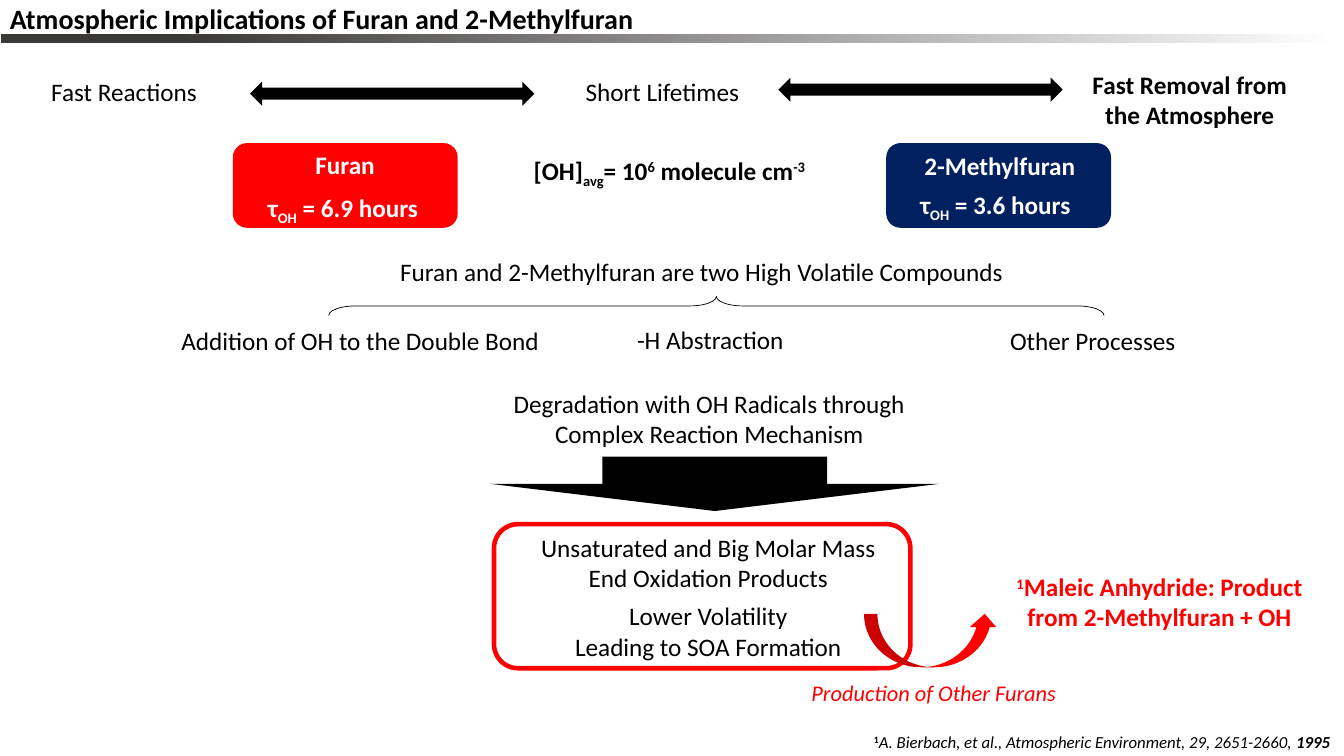
from typing import NamedTuple, Optional

import pptx
import pptx.dml.color
import pptx.enum.shapes
import pptx.enum.text
import pptx.util

PX = 9144  # EMU per px, 100 px to the inch
FONT = "Calibri"
BLACK, WHITE, RED, NAVY = "000000", "FFFFFF", "FF0000", "002060"
SUB, SUP = -25000, 30000
SHAPE = pptx.enum.shapes.MSO_SHAPE
ALIGN = pptx.enum.text.PP_ALIGN


class Box(NamedTuple):
    x: int
    y: int
    w: int
    h: int


class Run(NamedTuple):
    text: str
    baseline: int = 0
    bold: Optional[bool] = None
    italic: Optional[bool] = None


class Label(NamedTuple):
    box: Box
    lines: list[list[Run]]
    size: int = 18
    color: str = BLACK
    bold: bool = False
    italic: bool = False
    center: bool = False
    wrap: bool = False


class Figure(NamedTuple):
    kind: SHAPE
    box: Box
    fill: Optional[str] = None
    line: Optional[str] = None
    line_pt: float = 0
    rotation: int = 0
    adjustments: tuple[float, ...] = ()


def rgb(color: str) -> pptx.dml.color.RGBColor:
    return pptx.dml.color.RGBColor.from_string(color)


def emu(box: Box) -> list[int]:
    return [v * PX for v in box]


def plain(*lines: str) -> list[list[Run]]:
    return [[Run(line)] for line in lines]


def lifetime(hours: str) -> list[list[Run]]:
    return [[Run("τ"), Run("ΟΗ", SUB), Run(f" = {hours} hours")]]


def add_figure(slide, fig: Figure):
    sp = slide.shapes.add_shape(fig.kind, *emu(fig.box))
    sp.shadow.inherit = False
    sp.rotation = fig.rotation
    for i, value in enumerate(fig.adjustments):
        sp.adjustments[i] = value
    if fig.fill:
        sp.fill.solid()
        sp.fill.fore_color.rgb = rgb(fig.fill)
    else:
        sp.fill.background()
    if fig.line:
        sp.line.color.rgb = rgb(fig.line)
        sp.line.width = pptx.util.Pt(fig.line_pt)
    else:
        sp.line.fill.background()
    return sp


def add_label(slide, label: Label) -> None:
    tf = slide.shapes.add_textbox(*emu(label.box)).text_frame
    tf.word_wrap = label.wrap
    tf.auto_size = pptx.enum.text.MSO_AUTO_SIZE.SHAPE_TO_FIT_TEXT
    for i, line in enumerate(label.lines):
        p = tf.add_paragraph() if i else tf.paragraphs[0]
        p.alignment = ALIGN.CENTER if label.center else ALIGN.LEFT
        p.font.name = FONT
        p.font.size = pptx.util.Pt(label.size)
        p.font.color.rgb = rgb(label.color)
        p.font.bold = label.bold
        p.font.italic = label.italic
        for run in line:
            r = p.add_run()
            r.text = run.text
            r.font.bold = run.bold
            r.font.italic = run.italic
            if run.baseline:
                r._r.get_or_add_rPr().set("baseline", str(run.baseline))


FIGURES = [
    # Compound cards
    Figure(SHAPE.ROUNDED_RECTANGLE, Box(231, 142, 223, 84), RED),
    Figure(SHAPE.ROUNDED_RECTANGLE, Box(879, 142, 223, 84), NAVY),
    # Links between the three facts
    Figure(SHAPE.LEFT_RIGHT_ARROW, Box(248, 81, 282, 24), BLACK),
    Figure(SHAPE.LEFT_RIGHT_ARROW, Box(772, 77, 282, 24), BLACK),
    # Brace over the reaction paths
    Figure(SHAPE.LEFT_BRACE, Box(701, -81, 19, 769), line=BLACK, line_pt=0.5,
           rotation=90, adjustments=(1.4, 0.5)),
    # Products
    Figure(SHAPE.DOWN_ARROW, Box(486, 453, 446, 54), BLACK),
    Figure(SHAPE.ROUNDED_RECTANGLE, Box(490, 520, 413, 143), line=RED, line_pt=3.25),
    Figure(SHAPE.CURVED_UP_ARROW, Box(857, 609, 133, 53), RED),
]

LABELS = [
    Label(Box(0, -3, 644, 44),
          plain("Atmospheric Implications of Furan and 2-Methylfuran"), size=20, bold=True),
    # Facts
    Label(Box(41, 71, 166, 40), plain("Fast Reactions")),
    Label(Box(571, 71, 174, 40), plain("Short Lifetimes")),
    Label(Box(1054, 64, 252, 71), plain("Fast Removal from the Atmosphere"),
          bold=True, center=True, wrap=True),
    # Lifetimes
    Label(Box(303, 143, 80, 40), plain("Furan"), color=WHITE, bold=True),
    Label(Box(256, 186, 174, 40), lifetime("6.9"), color=WHITE, bold=True),
    Label(Box(907, 144, 171, 40), plain("2-Methylfuran"), color=WHITE, bold=True),
    Label(Box(903, 183, 174, 40), lifetime("3.6"), color=WHITE, bold=True),
    Label(Box(511, 149, 306, 40),
          [[Run("[OH]"), Run("avg", SUB), Run("= 10"), Run("6", SUP),
            Run(" molecule cm"), Run("-3", SUP)]], bold=True, center=True),
    # Reaction paths
    Label(Box(387, 249, 626, 40),
          plain("Furan and 2-Methylfuran are two High Volatile Compounds")),
    Label(Box(170, 318, 380, 40), plain("Addition of OH to the Double Bond"), wrap=True),
    Label(Box(622, 317, 173, 40), plain("-H Abstraction")),
    Label(Box(992, 318, 186, 40), plain("Other Processes")),
    # Degradation and products
    Label(Box(497, 380, 413, 71),
          plain("Degradation with OH Radicals through", "Complex Reaction Mechanism"),
          center=True),
    Label(Box(525, 523, 355, 71),
          plain("Unsaturated and Big Molar Mass", "End Oxidation Products"), center=True),
    Label(Box(559, 591, 287, 71),
          plain("Lower Volatility", "Leading to SOA Formation"), center=True),
    Label(Box(994, 562, 312, 71),
          [[Run("1", SUP), Run("Maleic Anhydride: Product")],
           [Run("from 2-Methylfuran + OH")]], color=RED, bold=True, center=True),
    Label(Box(795, 669, 271, 37), plain("Production of Other Furans"),
          size=16, color=RED, italic=True),
    # Citation
    Label(Box(857, 721, 484, 30),
          [[Run("1", SUP, bold=True),
            Run("A. Bierbach, et al., Atmospheric Environment, 29, 2651-2660, ", italic=True),
            Run("1995", bold=True, italic=True)]], size=12, wrap=True),
]


def main() -> None:
    prs = pptx.Presentation()
    prs.slide_width, prs.slide_height = 1333 * PX, 750 * PX
    slide = prs.slides.add_slide(prs.slide_layouts[6])

    # Title rule, fading to the right
    rule = add_figure(slide, Figure(SHAPE.RECTANGLE, Box(1, 34, 1326, 9)))
    rule.fill.gradient()
    rule.fill.gradient_angle = 180
    for stop, position, color in zip(rule.fill.gradient_stops, (0, 0.87), (WHITE, "3B3838")):
        stop.position = position
        stop.color.rgb = rgb(color)

    for fig in FIGURES:
        add_figure(slide, fig)
    for label in LABELS:
        add_label(slide, label)
    prs.save("out.pptx")


if __name__ == "__main__":
    main()
